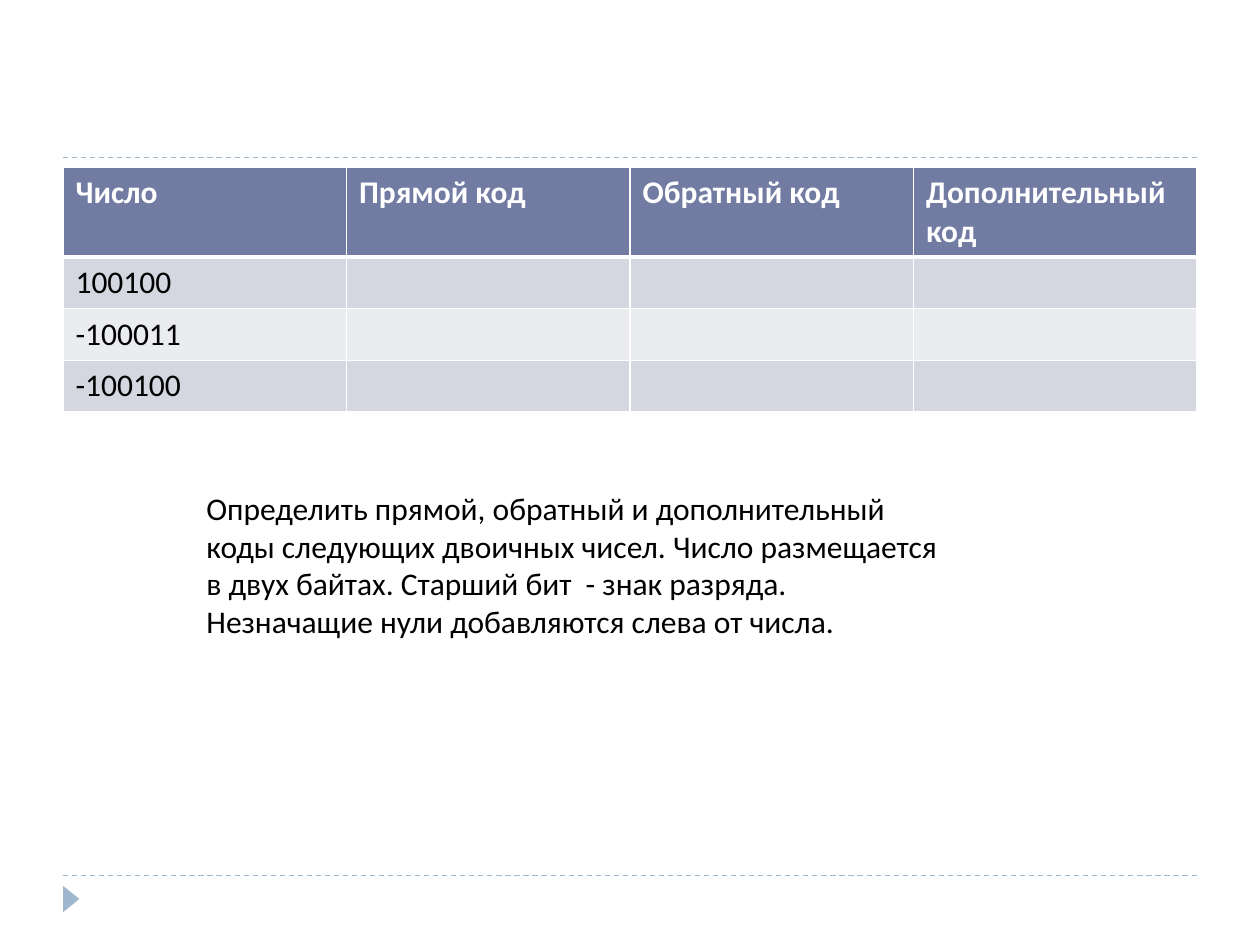
from lxml import etree
from pptx import Presentation, util as u
from pptx.dml.color import RGBColor
from pptx.enum import dml, shapes, text
from pptx.oxml.ns import qn

WHITE = RGBColor(0xFF, 0xFF, 0xFF)
BLACK = RGBColor(0, 0, 0)
ACCENT = RGBColor(0x9F, 0xB8, 0xCD)
HEADER = RGBColor(0x72, 0x7C, 0xA3)
BANDS = [RGBColor(0xEB, 0xEC, 0xF0), RGBColor(0xD5, 0xD7, 0xE0)]

WIDTH, MARGIN = 10, 0.5
CONTENT = WIDTH - 2 * MARGIN
HEADER_ROW, BODY_ROW = 0.69, 0.41
ROWS = [
    ["Число", "Прямой код", "Обратный код", "Дополнительный код"],
    ["100100", "", "", ""],
    ["-100011", "", "", ""],
    ["-100100", "", "", ""],
]
TASK = (
    "Определить прямой, обратный и дополнительный коды следующих двоичных чисел. "
    "Число размещается в двух байтах. Старший бит  - знак разряда. "
    "Незначащие нули добавляются слева от числа."
)


def write(para, words, color, bold=False):
    span = para.add_run()
    span.text = words
    for name, value in {"name": "Calibri", "size": u.Pt(18), "bold": bold}.items():
        setattr(span.font, name, value)
    span.font.color.rgb = color


def add_border(cell, side, points):
    props = cell._tc.get_or_add_tcPr()
    line = etree.SubElement(props, qn(f"a:ln{side}"), w=str(u.Pt(points)))
    fill = etree.SubElement(line, qn("a:solidFill"))
    etree.SubElement(fill, qn("a:srgbClr"), val=str(WHITE))


deck = Presentation()
deck.slide_width, deck.slide_height = u.Inches(WIDTH), u.Inches(7.5)
page = deck.slides.add_slide(deck.slide_layouts[6])

for y in (6.95, 1.25):
    rule = page.shapes.add_connector(
        shapes.MSO_CONNECTOR.STRAIGHT,
        u.Inches(MARGIN), u.Inches(y), u.Inches(WIDTH - MARGIN), u.Inches(y),
    )
    rule.line.color.rgb = ACCENT
    rule.line.width = u.Pt(0.75)
    rule.line.dash_style = dml.MSO_LINE.DASH
    etree.SubElement(rule._element.spPr, qn("a:effectLst"))

marker = page.shapes.add_shape(
    shapes.MSO_SHAPE.ISOSCELES_TRIANGLE,
    u.Inches(0.46), u.Inches(7.07), u.Inches(0.21), u.Inches(0.13),
)
marker.rotation = 90
marker.shadow.inherit = False
marker.fill.solid()
marker.fill.fore_color.rgb = ACCENT
marker.line.fill.background()

table = page.shapes.add_table(
    len(ROWS), len(ROWS[0]), u.Inches(MARGIN), u.Inches(1.33),
    u.Inches(CONTENT), u.Inches(HEADER_ROW + 3 * BODY_ROW),
).table
for column in table.columns:
    column.width = u.Inches(CONTENT / len(ROWS[0]))
for r, row in enumerate(ROWS):
    is_header = r == 0
    table.rows[r].height = u.Inches(HEADER_ROW if is_header else BODY_ROW)
    for c, words in enumerate(row):
        cell = table.cell(r, c)
        if words:
            write(cell.text_frame.paragraphs[0], words, WHITE if is_header else BLACK, is_header)
        for side in "LRTB":
            thick = (is_header and side == "B") or (r == 1 and side == "T")
            add_border(cell, side, 3 if thick else 1)
        cell.fill.solid()
        cell.fill.fore_color.rgb = HEADER if is_header else BANDS[r % 2]

box = page.shapes.add_textbox(u.Inches(1.54), u.Inches(3.83), u.Inches(6.06), u.Inches(1.31))
box.text_frame.word_wrap = True
box.text_frame.auto_size = text.MSO_AUTO_SIZE.SHAPE_TO_FIT_TEXT
write(box.text_frame.paragraphs[0], TASK, BLACK)

deck.save("out.pptx")
